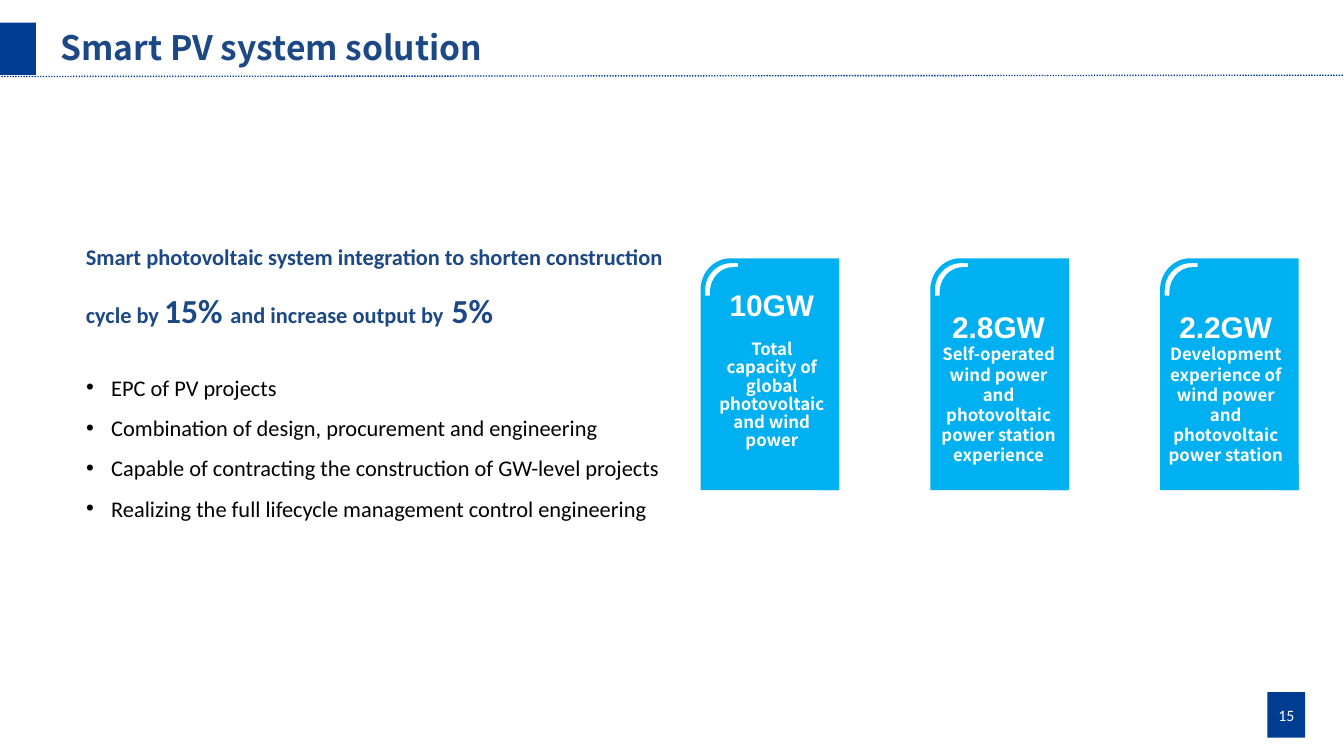
from math import cos, pi, sin

from lxml import etree
from pptx import Presentation
from pptx.dml.color import RGBColor
from pptx.enum.dml import MSO_LINE
from pptx.enum.shapes import MSO_CONNECTOR, MSO_SHAPE
from pptx.enum.text import MSO_ANCHOR, MSO_AUTO_SIZE, PP_ALIGN
from pptx.oxml.ns import qn
from pptx.util import Pt


class Theme:
    navy = RGBColor(0x00, 0x3C, 0x91)
    heading = RGBColor(0x1C, 0x48, 0x85)
    card = RGBColor(0x00, 0xB0, 0xF0)
    black = RGBColor(0, 0, 0)
    white = RGBColor(255, 255, 255)
    sans, body, figure = "Noto Sans CJK SC", "Calibri", "Arial"
    title_size, accent_size, figure_size = 18, 18, 16
    text_size, caption_size, number_size = 12, 9, 8.5


def style(font, name, size, color, bold=False):
    font.name, font.size, font.bold = name, Pt(size), bold
    font.color.rgb = color


def quarter(center_x, center_y, radius_x, radius_y, steps=12):
    """Points of a top-left quarter ellipse, from its left end to its top."""
    angles = [pi / 2 * step / steps for step in range(steps + 1)]
    return [(Pt(center_x - radius_x * cos(a)), Pt(center_y - radius_y * sin(a)))
            for a in angles]


deck = Presentation()
deck.slide_width, deck.slide_height = Pt(720), Pt(405)
page = deck.slides.add_slide(deck.slide_layouts[1])
shapes = page.shapes
title, bullets = page.placeholders

# Header rule, header block and page number
rule = shapes.add_connector(MSO_CONNECTOR.STRAIGHT, Pt(-0.7), Pt(41), Pt(720.7), Pt(40.3))
rule.line.color.rgb = Theme.navy
rule.line.width = Pt(0.75)
rule.line.dash_style = MSO_LINE.ROUND_DOT
etree.SubElement(rule._element.spPr, qn("a:effectLst"))

for left, top, width, height, label in [(-0.7, 12.2, 20, 28, ""), (679, 370.8, 20.2, 24.5, "15")]:
    block = shapes.add_shape(MSO_SHAPE.RECTANGLE, Pt(left), Pt(top), Pt(width), Pt(height))
    block.shadow.inherit = False
    block.fill.solid()
    block.fill.fore_color.rgb = Theme.navy
    block.line.fill.background()
    if label:
        frame = block.text_frame
        frame.margin_left = frame.margin_right = 0
        frame.text = label
        frame.paragraphs[0].alignment = PP_ALIGN.CENTER
        style(frame.paragraphs[0].runs[0].font, Theme.body, Theme.number_size, Theme.white)

# Title
title.left, title.top, title.width, title.height = Pt(25.2), Pt(10.8), Pt(435.6), Pt(29)
frame = title.text_frame
frame.text = "Smart PV system solution"
frame.auto_size = MSO_AUTO_SIZE.NONE
frame.vertical_anchor = MSO_ANCHOR.TOP
frame.paragraphs[0].alignment = PP_ALIGN.LEFT
style(frame.paragraphs[0].runs[0].font, Theme.sans, Theme.title_size, Theme.heading, True)

# Key message
message = shapes.add_textbox(Pt(38.9), Pt(119.5), Pt(332), Pt(58.3))
message.text_frame.word_wrap = True
para = message.text_frame.paragraphs[0]
para.line_spacing = 1.5
for text, size in [
    ("Smart photovoltaic system integration to shorten construction cycle by ", Theme.text_size),
    ("15% ", Theme.accent_size),
    ("and increase output by", Theme.text_size),
    (" 5%", Theme.accent_size),
]:
    span = para.add_run()
    span.text = text
    style(span.font, Theme.body, size, Theme.heading, True)

# Bullet list
bullets.left, bullets.top, bullets.width, bullets.height = Pt(38.9), Pt(189.4), Pt(337), Pt(94.3)
frame = bullets.text_frame
frame.text = "\n".join([
    "EPC of PV projects",
    "Combination of design, procurement and engineering",
    "Capable of contracting the construction of GW-level projects",
    "Realizing the full lifecycle management control engineering",
])
frame.auto_size = MSO_AUTO_SIZE.NONE
for para in frame.paragraphs:
    para.alignment = PP_ALIGN.JUSTIFY
    para.line_spacing = 1.5
    para.space_before = Pt(0)
    properties = para._p.get_or_add_pPr()
    properties.set("marL", str(Pt(13.5)))
    properties.set("indent", str(Pt(-13.5)))
    etree.SubElement(properties, qn("a:buFont"), typeface="Arial")
    etree.SubElement(properties, qn("a:buChar"), char="•")
    style(para.runs[0].font, Theme.body, Theme.text_size, Theme.black)

# Capacity cards: rounded corner with a cut-out arc, and a corner fold
CARD_LEFT, CARD_TOP, CARD_STEP, CARD_WIDTH, CARD_HEIGHT = 375.3, 138.4, 123.1, 74.2, 124.2
right, bottom = Pt(CARD_WIDTH), Pt(CARD_HEIGHT)
outline = quarter(16.2, 17, 16.2, 17) + [(right, 0), (right, bottom), (0, bottom)]
arc = (quarter(16.5, 17, 14, 14.4) + [(Pt(20.2), Pt(2.6)), (Pt(20.2), Pt(4.8))]
       + quarter(17.3, 18.5, 12.3, 13.7)[::-1] + [(Pt(5), Pt(20)), (Pt(2.5), Pt(20))])
fold = [(Pt(x), Pt(y)) for x, y in
        [(66, 104.4), (CARD_WIDTH, 110.9), (CARD_WIDTH, CARD_HEIGHT),
         (63.2, CARD_HEIGHT), (53.2, 117.4)]]

cards = [
    ("10GW", "Total capacity of global photovoltaic and wind power", None),
    ("2.8GW", "Self-operated wind power and photovoltaic power station experience", 493.2),
    ("2.2GW", "Development experience of wind power and photovoltaic power station", 614.9),
]
for index, (figure, caption, text_left) in enumerate(cards):
    left = Pt(CARD_LEFT + index * CARD_STEP)
    pieces = []
    for contours in ([outline, arc], [fold]):
        builder = shapes.build_freeform(*contours[0][0])
        builder.add_line_segments(contours[0][1:])
        for contour in contours[1:]:
            builder.move_to(*contour[0])
            builder.add_line_segments(contour[1:])
        piece = builder.convert_to_shape(left, Pt(CARD_TOP))
        piece.shadow.inherit = False
        piece.fill.solid()
        piece.fill.fore_color.rgb = Theme.card
        piece.line.fill.background()
        pieces.append(piece)

    if text_left is None:
        frame = pieces[0].text_frame
        frame.margin_left, frame.margin_right = Pt(8.6), Pt(6.5)
        frame.margin_top, frame.margin_bottom = Pt(3.6), Pt(17.3)
        frame.vertical_anchor = MSO_ANCHOR.MIDDLE
        spacings, gap = (1.4, 0.9), 10
    else:
        box = shapes.add_textbox(Pt(text_left), Pt(152), Pt(83.5), Pt(101.5))
        frame = box.text_frame
        spacings, gap = (1.5, 1.0), 0
    frame.word_wrap = True
    frame.text = f"{figure}\n{caption}"
    for para, spacing in zip(frame.paragraphs, spacings):
        para.alignment = PP_ALIGN.CENTER
        para.line_spacing = spacing
    frame.paragraphs[1].space_before = Pt(gap)
    style(frame.paragraphs[0].runs[0].font, Theme.figure, Theme.figure_size, Theme.white, True)
    style(frame.paragraphs[1].runs[0].font, Theme.sans, Theme.caption_size, Theme.white, True)

deck.save("out.pptx")
